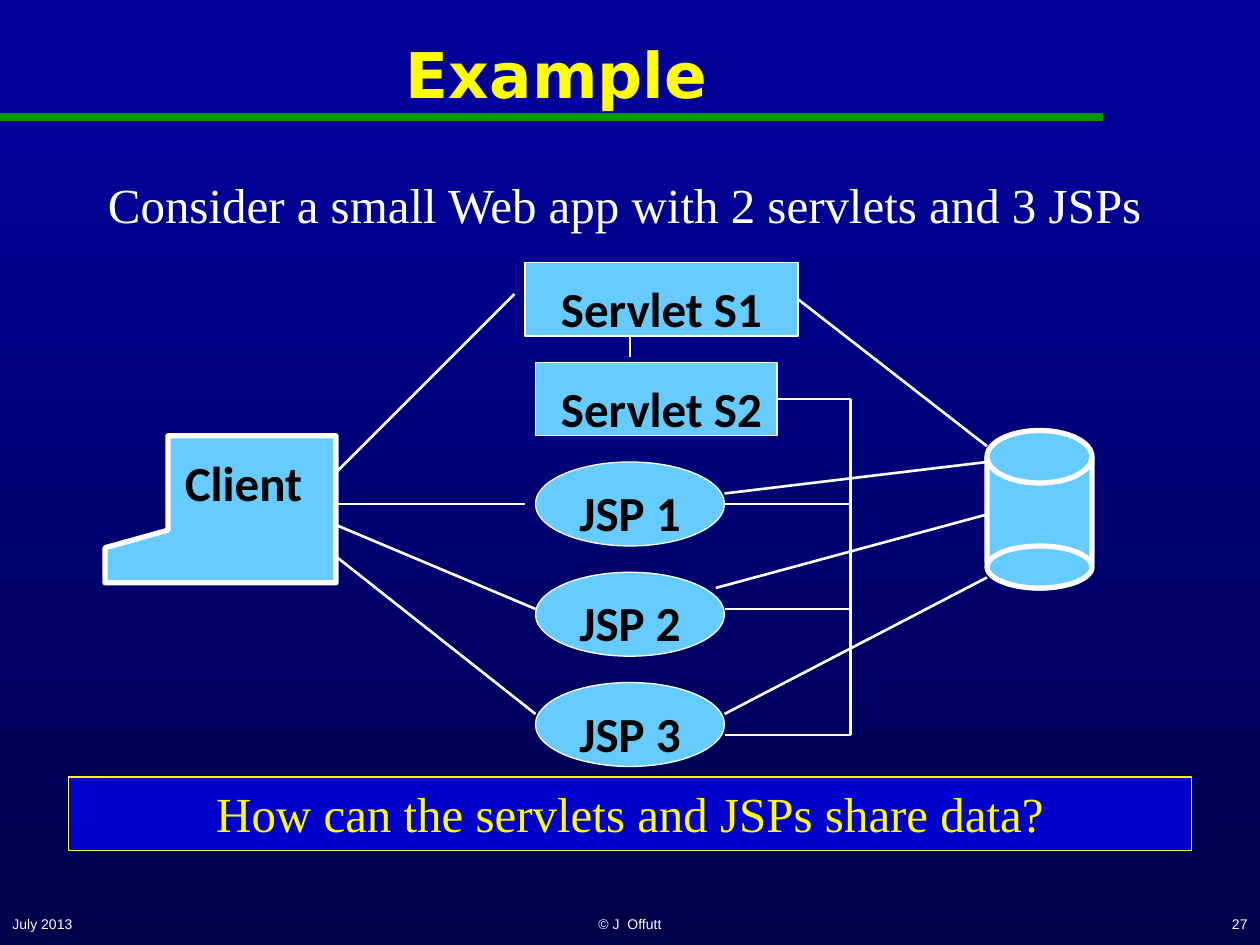
from lxml.etree import SubElement
from pptx import Presentation
from pptx.dml.color import RGBColor
from pptx.enum.shapes import MSO_CONNECTOR, MSO_SHAPE as Shape
from pptx.enum.text import MSO_ANCHOR as Anchor, PP_ALIGN as Align
from pptx.oxml.ns import qn
from pptx.util import Pt

WHITE, YELLOW, SKY = "FFFFFF", "FFFF00", "66CCFF"
LEFT_SIDE, RIGHT_SIDE = 1, 3


def color(value):
    return RGBColor.from_string(value)


def paint_background(page):
    fill = page.background.fill
    fill.gradient()
    fill.gradient_angle = 270
    for stop, position, value in zip(fill.gradient_stops, (0.13, 1), ("000099", "000048")):
        stop.position = position
        stop.color.rgb = color(value)


def write_text(box, text, size, font, value, align=Align.CENTER, bold=False, anchor=Anchor.TOP):
    frame = box.text_frame
    frame.word_wrap = True
    frame.vertical_anchor = anchor
    frame.text = text
    para = frame.paragraphs[0]
    para.alignment = align
    span = para.runs[0].font
    span.size, span.name, span.bold = Pt(size), font, bold
    span.color.rgb = color(value)


def add_text(page, bounds, *style, **options):
    box = page.shapes.add_textbox(*map(Pt, bounds))
    write_text(box, *style, **options)


def add_label(page, bounds, text, align=Align.CENTER):
    add_text(page, bounds, text, 28, "Calibri", "000000", align=align, bold=True)


def style_shape(shape, fill, line, width):
    shape.shadow.inherit = False
    shape.fill.solid()
    shape.fill.fore_color.rgb = color(fill)
    shape.line.color.rgb = color(line)
    shape.line.width = Pt(width)
    return shape


def add_figure(page, kind, bounds, fill=SKY, line=WHITE, width=0.75):
    shape = page.shapes.add_shape(kind, *map(Pt, bounds))
    return style_shape(shape, fill, line, width)


def add_line(page, start, end, width=1.5, value=WHITE):
    line = page.shapes.add_connector(MSO_CONNECTOR.STRAIGHT, *map(Pt, (*start, *end)))
    line.line.width = Pt(width)
    line.line.color.rgb = color(value)
    SubElement(line._element.spPr, qn("a:effectLst"))
    return line


def add_client(page):
    points = [(192, 249), (192, 333), (60, 333), (60, 313), (96, 303), (96, 249)]
    builder = page.shapes.build_freeform(Pt(108), Pt(249))
    builder.add_line_segments([(Pt(x), Pt(y)) for x, y in points], close=True)
    style_shape(builder.convert_to_shape(), SKY, WHITE, 3)
    add_label(page, (98.5, 255, 99, 75), "Client", Align.LEFT)


def add_servlet(page, name, bounds):
    servlet = add_figure(page, Shape.RECTANGLE, bounds)
    add_label(page, (300, bounds[1] + 5.5, 156, 41), name)
    return servlet


def add_jsps(page):
    for index in range(3):
        top = 264 + 63 * index
        add_figure(page, Shape.OVAL, (306, top, 108, 48))
        add_label(page, (311, top + 8.25, 98, 41), f"JSP {index + 1}")


def add_database(page):
    add_figure(page, Shape.FLOWCHART_MAGNETIC_DISK, (564, 246, 60, 90), width=3)
    add_figure(page, Shape.OVAL, (564, 312, 60, 24), width=3)


def add_links(page, first, second):
    client_x, bus_x, database_x, jsp_right = 192, 486, 564, 414
    for y, end in ((288, (300, 288)), (300, (306, 348)), (318, (306, 408)), (270, (294, 168))):
        add_line(page, (client_x, y), end)
    add_line(page, (360, 192), (360, 204), 0.75)

    add_line(page, (444, 228), (bus_x, 228)).begin_connect(second, RIGHT_SIDE)
    add_line(page, (bus_x, 228), (bus_x, 420))
    for y in (420, 348, 288):
        add_line(page, (bus_x, y), (jsp_right, y))

    add_line(page, (456, 171), (database_x, 255)).begin_connect(first, RIGHT_SIDE)
    for y, end in ((264, (jsp_right, 282)), (294, (409, 336)), (330, (jsp_right, 408))):
        add_line(page, (database_x, y), end)


def add_footer(page):
    for left, width, text, align in (
        (0, 150, "July 2013", Align.LEFT),
        (246, 228, "© J  Offutt", Align.CENTER),
        (570, 150, "27", Align.RIGHT),
    ):
        add_text(page, (left, 516, width, 24), text, 8, "Arial", WHITE,
                 align=align, anchor=Anchor.MIDDLE)


def main():
    deck = Presentation()
    deck.slide_width, deck.slide_height = Pt(720), Pt(540)
    page = deck.slides.add_slide(deck.slide_layouts[6])
    paint_background(page)
    add_line(page, (0, 67), (630, 67), 4.5, "009900")
    add_footer(page)
    add_text(page, (6, 6, 624, 72), "Example", 36, "DejaVu Sans", YELLOW,
             bold=True, anchor=Anchor.MIDDLE)
    add_text(page, (12, 96, 690, 41), "Consider a small Web app with 2 servlets and 3 JSPs",
             28, "Times New Roman", WHITE)
    add_client(page)
    first = add_servlet(page, "Servlet S1", (300, 150, 156, 42))
    second = add_servlet(page, "Servlet S2", (306, 207, 138, 42))
    add_jsps(page)
    add_database(page)
    add_links(page, first, second)
    question = add_figure(page, Shape.RECTANGLE, (39, 444, 642, 42), "0000CC", YELLOW)
    write_text(question, "How can the servlets and JSPs share data?", 28, "Times New Roman", YELLOW)
    deck.save("out.pptx")


if __name__ == "__main__":
    main()
